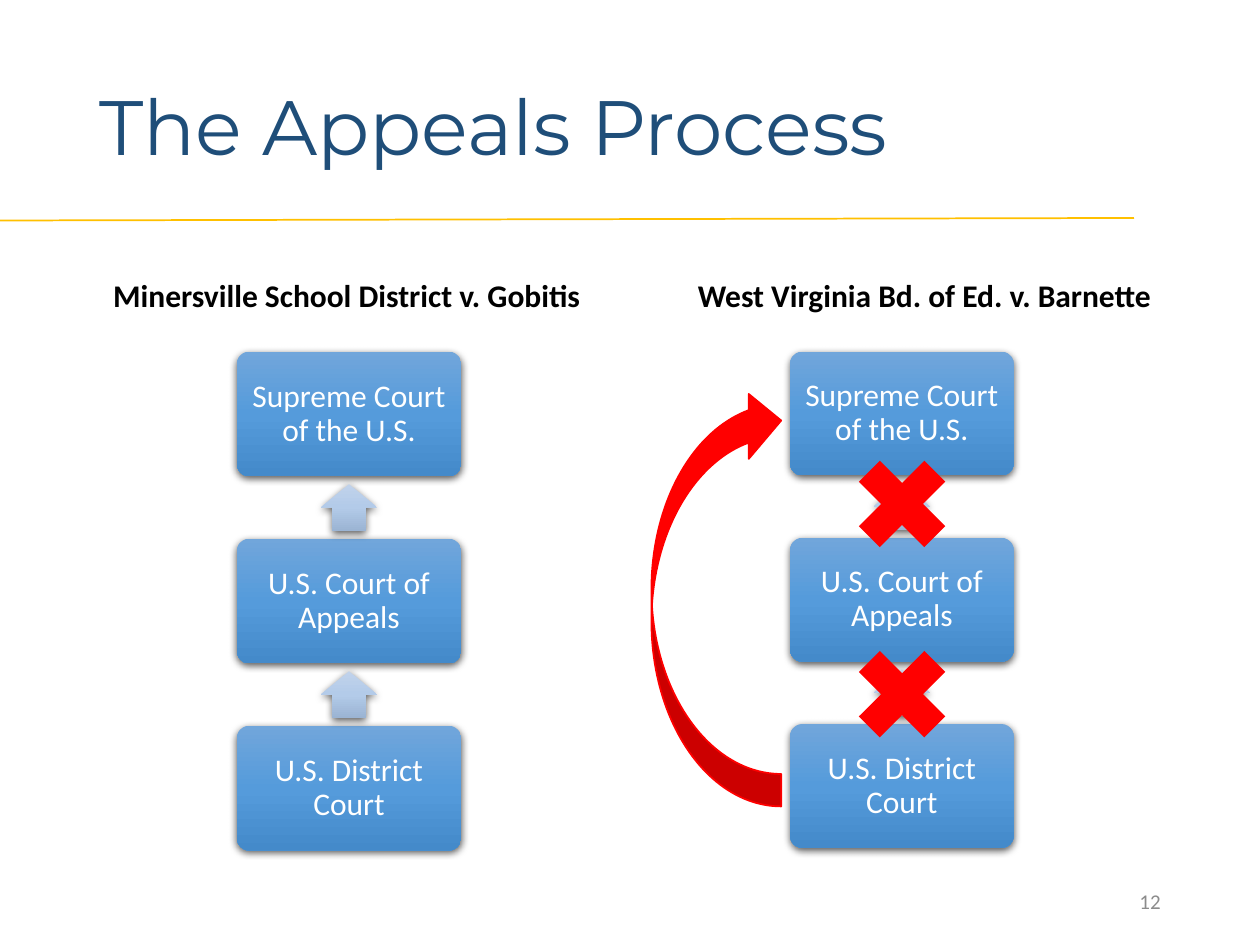
import lxml.etree
import pptx
import pptx.dml.color
import pptx.enum.shapes
import pptx.enum.text
import pptx.oxml
import pptx.oxml.ns
import pptx.util

THEME = {
    "body_font": "Calibri", "title_font": "Montserrat",
    "title_size": 44, "text_size": 18, "number_size": 12,
    "title": "1F4E79", "rule": "FFC000", "heading": "000000",
    "number": "8C8C8C", "court_text": "FFFFFF", "mark": "FF0000",
    "court": ("71A6DB", "559BDB", "448ACA"),
    "step": ("C0D2EB", "B3CBE9", "9BB4D3"),
}
SHAPE = pptx.enum.shapes.MSO_SHAPE
ALIGN = pptx.enum.text.PP_ALIGN
MIDDLE = pptx.enum.text.MSO_ANCHOR.MIDDLE
rgb = pptx.dml.color.RGBColor.from_string

deck = pptx.Presentation()
deck.slide_width = pptx.util.Inches(10)
deck.slide_height = pptx.util.Inches(7.5)
page = deck.slides.add_slide(deck.slide_layouts[6])

# Grid of 100 columns by 75 rows
COLUMN = deck.slide_width / 100
ROW = deck.slide_height / 75


def write(box, text, size, color, font=THEME["body_font"], align=ALIGN.LEFT,
          bold=False, spacing=1.0, wrap=True):
    frame = box.text_frame
    frame.word_wrap = wrap
    frame.vertical_anchor = MIDDLE
    para = frame.paragraphs[0]
    para.alignment = align
    para.line_spacing = spacing
    span = para.add_run()
    span.text = text
    span.font.name = font
    span.font.size = pptx.util.Pt(size)
    span.font.bold = bold
    span.font.color.rgb = rgb(color)


def add_raised(kind, left, top, width, height, colors):
    """Add a shape with a vertical three-stop gradient and a soft shadow."""
    shape = page.shapes.add_shape(kind, int(left * COLUMN), int(top * ROW),
                                  int(width * COLUMN), int(height * ROW))
    shape.line.fill.background()
    shape.fill.gradient()
    shape.fill.gradient_angle = 270
    gradient = shape._element.spPr.find(pptx.oxml.ns.qn("a:gradFill"))
    gradient.set("rotWithShape", "0")
    stops = gradient.find(pptx.oxml.ns.qn("a:gsLst"))
    for stop in list(stops):
        stops.remove(stop)
    for place, color in zip((0, 50000, 100000), colors):
        stop = lxml.etree.SubElement(stops, pptx.oxml.ns.qn("a:gs"), pos=str(place))
        lxml.etree.SubElement(stop, pptx.oxml.ns.qn("a:srgbClr"), val=color)
    shape._element.spPr.append(pptx.oxml.parse_xml(
        f'<a:effectLst {pptx.oxml.ns.nsdecls("a")}>'
        '<a:outerShdw blurRad="57150" dist="19050" dir="5400000" algn="ctr" rotWithShape="0">'
        '<a:srgbClr val="000000"><a:alpha val="63000"/></a:srgbClr>'
        '</a:outerShdw></a:effectLst>'))
    return shape


# Rule under the title
rule = page.shapes.add_connector(pptx.enum.shapes.MSO_CONNECTOR.STRAIGHT,
                                 0, int(17.5 * ROW), int(90 * COLUMN), int(17.3 * ROW))
rule.line.color.rgb = rgb(THEME["rule"])
rule.line.width = pptx.util.Pt(1)
lxml.etree.SubElement(rule._element.spPr, pptx.oxml.ns.qn("a:effectLst"))

# Title and page number
title = page.shapes.add_textbox(int(6.9 * COLUMN), int(3.1 * ROW),
                                int(86.2 * COLUMN), int(14.5 * ROW))
write(title, "The Appeals Process", THEME["title_size"], THEME["title"],
      font=THEME["title_font"], spacing=0.9)
number = page.shapes.add_textbox(int(70.6 * COLUMN), int(69.5 * ROW),
                                 int(22.5 * COLUMN), int(4 * ROW))
write(number, "12", THEME["number_size"], THEME["number"], align=ALIGN.RIGHT)

# Two cases, each a ladder of three courts joined by upward steps
courts = ("Supreme Court of the U.S.", "U.S. Court of Appeals", "U.S. District Court")
cases = (
    ("Minersville School District v. Gobitis", 8, 39.4, 18.8, 17.8, 9.9, 14.85),
    ("West Virginia Bd. of Ed. v. Barnette", 54.4, 39, 62.7, 17.75, 9.83, 14.78),
)
FIRST_ROW = 27.9
STEP_LENGTH, STEP_WIDTH = 3.7, 4.45
COURT_INSET = int(0.5 * COLUMN)
for heading, heading_left, heading_width, left, width, height, pitch in cases:
    label = page.shapes.add_textbox(int(heading_left * COLUMN), int(21.4 * ROW),
                                    int(heading_width * COLUMN), int(4 * ROW))
    write(label, heading, THEME["text_size"], THEME["heading"], bold=True, wrap=False)
    for index, court in enumerate(courts):
        top = FIRST_ROW + index * pitch
        box = add_raised(SHAPE.ROUNDED_RECTANGLE, left, top, width, height, THEME["court"])
        box.adjustments[0] = 0.1
        box.text_frame.margin_left = box.text_frame.margin_right = COURT_INSET
        write(box, court, THEME["text_size"], THEME["court_text"],
              align=ALIGN.CENTER, spacing=0.9)
        if index:
            gap_middle = top - (pitch - height) / 2
            step = add_raised(SHAPE.RIGHT_ARROW, left + (width - STEP_LENGTH) / 2,
                              gap_middle - STEP_WIDTH / 2, STEP_LENGTH, STEP_WIDTH,
                              THEME["step"])
            step.adjustments[0] = 0.6
            step.rotation = 270

# Crossed-out steps and the direct route to the top court
marks = (
    (SHAPE.MATH_MULTIPLY, 66.6, 50.1, 10, 10, 0),
    (SHAPE.MATH_MULTIPLY, 66.6, 35, 10, 10, 0),
    (SHAPE.CURVED_LEFT_ARROW, 51.7, 30.8, 10.3, 33.2, 180),
)
for kind, left, top, width, height, turn in marks:
    mark = page.shapes.add_shape(kind, int(left * COLUMN), int(top * ROW),
                                 int(width * COLUMN), int(height * ROW))
    mark.shadow.inherit = False
    mark.rotation = turn
    mark.fill.solid()
    mark.fill.fore_color.rgb = rgb(THEME["mark"])
    if turn:
        mark.line.color.rgb = rgb(THEME["mark"])
        mark.line.width = pptx.util.Pt(1)
    else:
        mark.line.fill.background()

deck.save("out.pptx")
